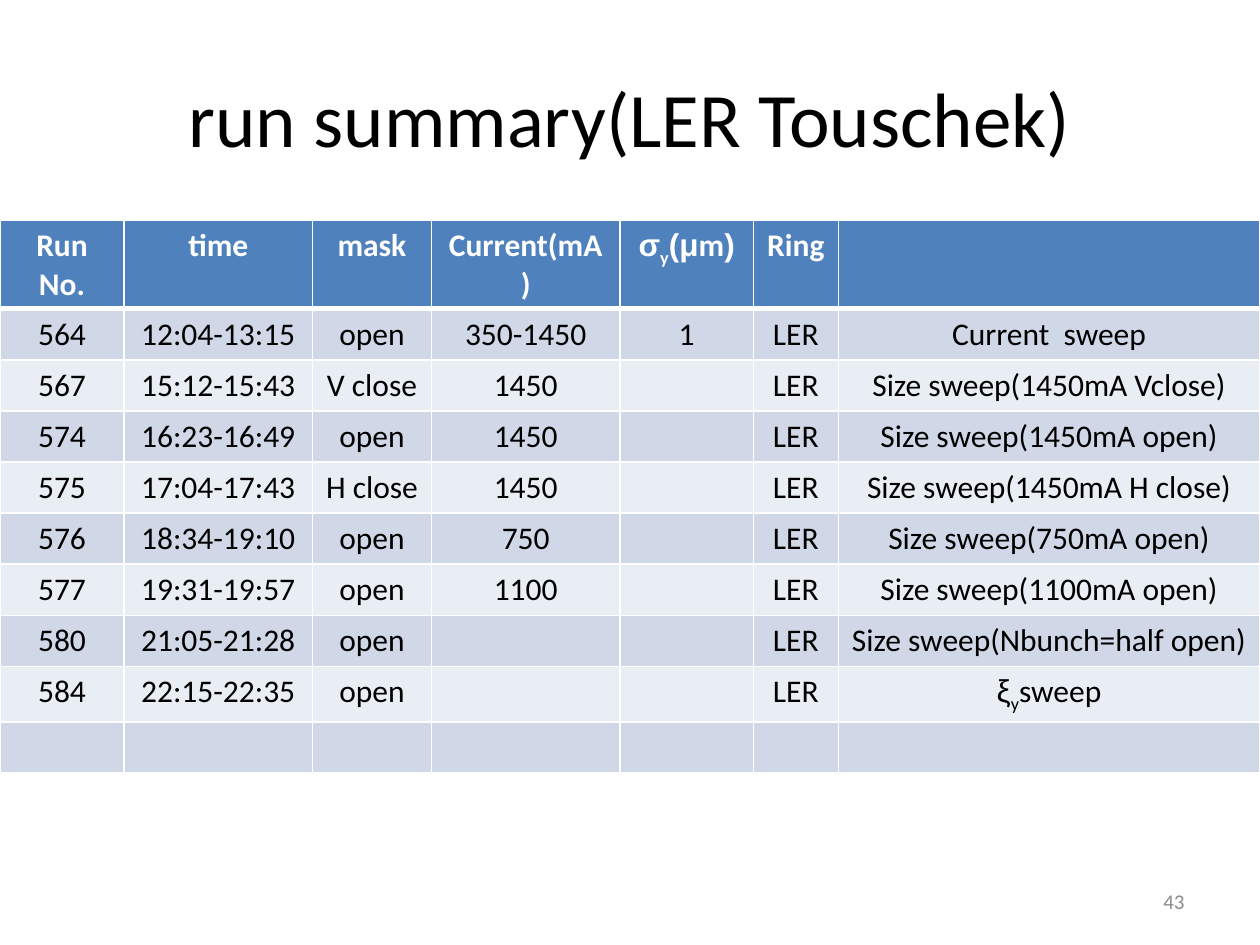
import dataclasses
import typing

import lxml.etree
import pptx
import pptx.dml.color
import pptx.enum.text
import pptx.oxml.ns
import pptx.util

Pt = pptx.util.Pt
Align = pptx.enum.text.PP_ALIGN
Anchor = pptx.enum.text.MSO_ANCHOR


@dataclasses.dataclass(frozen=True)
class Piece:
    text: str
    font: str = "Calibri"
    baseline: int = 0


@dataclasses.dataclass(frozen=True)
class RunRecord:
    number: str
    time: str
    mask: str
    current: str
    sigma: str
    ring: str
    purpose: str | tuple[Piece, ...]


SUBSCRIPT_Y = Piece("y", baseline=-25000)
HEADINGS = RunRecord(
    "Run No.", "time", "mask", "Current(mA)",
    (Piece("σ", "Arial"), SUBSCRIPT_Y, Piece("(μ", "Arial"), Piece("m"), Piece(")", "Arial")),
    "Ring", "",
)
RECORDS = [
    RunRecord("564", "12:04-13:15", "open", "350-1450", "1", "LER", "Current  sweep"),
    RunRecord("567", "15:12-15:43", "V close", "1450", "", "LER", "Size sweep(1450mA Vclose)"),
    RunRecord("574", "16:23-16:49", "open", "1450", "", "LER", "Size sweep(1450mA open)"),
    RunRecord("575", "17:04-17:43", "H close", "1450", "", "LER", "Size sweep(1450mA H close)"),
    RunRecord("576", "18:34-19:10", "open", "750", "", "LER", "Size sweep(750mA open)"),
    RunRecord("577", "19:31-19:57", "open", "1100", "", "LER", "Size sweep(1100mA open)"),
    RunRecord("580", "21:05-21:28", "open", "", "", "LER", "Size sweep(Nbunch=half open)"),
    RunRecord("584", "22:15-22:35", "open", "", "", "LER",
              (Piece("ξ", "Arial"), SUBSCRIPT_Y, Piece("sweep"))),
    RunRecord("", "", "", "", "", "", ""),
]
COLUMN_WIDTHS = [70.9, 107.7, 68, 107.7, 76.3, 48.5, 240.9]
ROW_HEIGHT = 29.2
HEADER_FILL = "4F81BD"
BAND_FILLS = ["D0D8E8", "E9EDF4"]


def color(value: str) -> pptx.dml.color.RGBColor:
    return pptx.dml.color.RGBColor.from_string(value)


def write(frame: typing.Any, content: str | tuple[Piece, ...], *, size: float,
          fill: str = "000000", bold: bool = False, align: Align = Align.CENTER) -> None:
    paragraph = frame.paragraphs[0]
    paragraph.alignment = align
    paragraph.font.size = Pt(size)
    pieces = (Piece(content),) if isinstance(content, str) else content
    for piece in pieces:
        if not piece.text:
            continue
        run = paragraph.add_run()
        run.text = piece.text
        run.font.name = piece.font
        run.font.size = Pt(size)
        run.font.bold = bold
        run.font.color.rgb = color(fill)
        if piece.baseline:
            run._r.get_or_add_rPr().set("baseline", str(piece.baseline))


def add_label(slide: typing.Any, content: str, left: float, top: float, width: float,
              height: float, **text_format: typing.Any) -> None:
    label = slide.shapes.add_textbox(Pt(left), Pt(top), Pt(width), Pt(height))
    label.text_frame.word_wrap = True
    label.text_frame.vertical_anchor = Anchor.MIDDLE
    write(label.text_frame, content, **text_format)


def set_borders(cell: typing.Any, top: float, bottom: float) -> None:
    properties = cell._tc.get_or_add_tcPr()
    qn = pptx.oxml.ns.qn
    for side, width in {"L": 1, "R": 1, "T": top, "B": bottom}.items():
        line = lxml.etree.SubElement(properties, qn(f"a:ln{side}"), w=str(Pt(width)))
        solid = lxml.etree.SubElement(line, qn("a:solidFill"))
        lxml.etree.SubElement(solid, qn("a:srgbClr"), val="FFFFFF")


def add_run_table(slide: typing.Any, left: float, top: float) -> None:
    rows = [HEADINGS, *RECORDS]
    table = slide.shapes.add_table(
        len(rows), len(COLUMN_WIDTHS), Pt(left), Pt(top),
        Pt(sum(COLUMN_WIDTHS)), Pt(ROW_HEIGHT * len(rows)),
    ).table
    for column, width in zip(table.columns, COLUMN_WIDTHS):
        column.width = Pt(width)
    for index, record in enumerate(rows):
        table.rows[index].height = Pt(ROW_HEIGHT)
        is_header = index == 0
        for position, field in enumerate(dataclasses.fields(record)):
            cell = table.cell(index, position)
            set_borders(cell, top=3 if index == 1 else 1, bottom=3 if is_header else 1)
            cell.fill.solid()
            cell.fill.fore_color.rgb = color(
                HEADER_FILL if is_header else BAND_FILLS[(index - 1) % 2])
            write(cell.text_frame, getattr(record, field.name), size=18, bold=is_header,
                  fill="FFFFFF" if is_header else "000000")


def main() -> None:
    presentation = pptx.Presentation()
    presentation.slide_width = Pt(720)
    presentation.slide_height = Pt(540)
    slide = presentation.slides.add_slide(presentation.slide_layouts[6])
    add_label(slide, "run summary(LER Touschek)", 36, 21.6, 648, 90, size=44)
    add_label(slide, "43", 516, 500.5, 168, 28.8, size=12, fill="8C8C8C", align=Align.RIGHT)
    add_run_table(slide, 0, 126)
    presentation.save("out.pptx")


if __name__ == "__main__":
    main()
